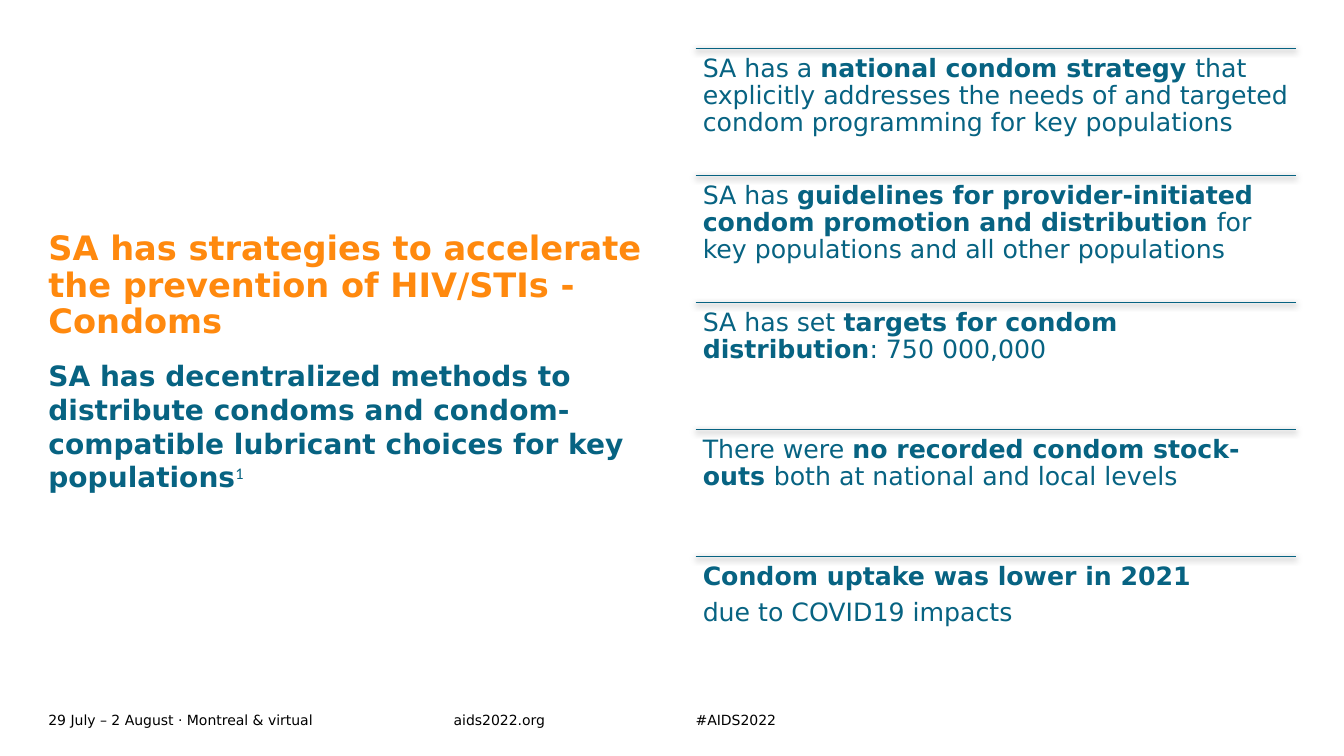
from lxml import etree
from pptx import Presentation, util as u
from pptx.dml.color import RGBColor
from pptx.enum import shapes, text
from pptx.oxml import ns, parse_xml

TITLE = [[("SA has strategies to accelerate the prevention of HIV/STIs - Condoms", "b")]]
SUMMARY = [[("SA has decentralized methods to distribute condoms and condom-compatible "
             "lubricant choices for key populations", "b"), ("1", "sup")]]
POINTS = [
    [[("SA has a ", ""), ("national condom strategy ", "b"),
      ("that explicitly addresses the needs of and targeted condom programming "
       "for key populations", "")]],
    [[("SA has ", ""),
      ("guidelines for provider-initiated condom promotion and distribution ", "b"),
      ("for key populations and all other populations", "")]],
    [[("SA has set ", ""), ("targets for condom distribution", "b"), (": 750 000,000", "")]],
    [[("There were ", ""), ("no recorded condom stock-outs ", "b"),
      ("both at national and local levels", "")]],
    [[("Condom uptake was lower in 2021", "b")], [("due to COVID19 impacts", "")]],
]
FOOTER = ["29 July – 2 August · Montreal & virtual", "aids2022.org", "#AIDS2022"]

THEME = {
    "font": "DejaVu Sans", "note_font": "Calibri",
    "teal": "076382", "orange": "FF890E", "black": "000000",
    "title": 24, "summary": 20, "point": 18, "footer": 10,
}

WIDTH, HEIGHT = 13.33, 7.5
MARGIN, COL, GUTTER, ROW = 0.48, 5.95, 0.47, 1.26
RIGHT = MARGIN + COL + GUTTER
FOOT_COL, FOOT_TOP, FOOT_H = 1.93, 7.02, 0.24
FOOT_CELLS = [(MARGIN, RIGHT - GUTTER - FOOT_COL - MARGIN),
              (RIGHT - GUTTER - FOOT_COL, FOOT_COL), (RIGHT, FOOT_COL)]

SHADOW = (f'<a:effectLst {ns.nsdecls("a")}>'
          f'<a:outerShdw blurRad="{u.Pt(4.5)}" dist="{u.Pt(1.5)}" dir="5400000" '
          'algn="ctr" rotWithShape="0"><a:srgbClr val="000000"><a:alpha val="63000"/>'
          '</a:srgbClr></a:outerShdw></a:effectLst>')


def place(sp, left, top, width, height):
    sp.left, sp.top, sp.width, sp.height = map(u.Inches, (left, top, width, height))
    return sp


def write(sp, paragraphs, size, color="teal", anchor=text.MSO_ANCHOR.TOP,
          inset=0, spacing=1.0, after=0):
    tf = sp.text_frame
    tf.word_wrap, tf.auto_size, tf.vertical_anchor = True, text.MSO_AUTO_SIZE.NONE, anchor
    tf.margin_left = tf.margin_top = tf.margin_right = tf.margin_bottom = u.Inches(inset)
    for i, runs in enumerate(paragraphs):
        p = tf.add_paragraph() if i else tf.paragraphs[0]
        pPr = p._p.get_or_add_pPr()
        pPr.set("marL", "0")
        pPr.set("indent", "0")
        etree.SubElement(pPr, ns.qn("a:buNone"))
        p.alignment, p.line_spacing = text.PP_ALIGN.LEFT, spacing
        p.space_before, p.space_after = u.Pt(0), u.Pt(after)
        for words, style in runs:
            r = p.add_run()
            r.text = words
            r.font.size, r.font.bold = u.Pt(THEME[size]), style == "b"
            r.font.name = THEME["note_font" if style == "sup" else "font"]
            r.font.color.rgb = RGBColor.from_string(THEME[color])
            if style == "sup":
                r._r.get_or_add_rPr().set("baseline", "30000")


def add_rule(parent, left, top, width):
    line = parent.add_connector(shapes.MSO_CONNECTOR.STRAIGHT, *map(
        u.Inches, (left, top, left + width, top)))
    line.line.color.rgb = RGBColor.from_string(THEME["teal"])
    line.line.width = u.Pt(0.5)
    line._element.spPr.append(parse_xml(SHADOW))


def main():
    prs = Presentation()
    prs.slide_width, prs.slide_height = u.Inches(WIDTH), u.Inches(HEIGHT)
    s = prs.slides.add_slide(prs.slide_layouts[1])

    title = place(s.shapes.title, MARGIN, 1.82, COL, 1.56)
    write(title, TITLE, "title", color="orange", anchor=text.MSO_ANCHOR.BOTTOM, spacing=0.9)
    summary = place(s.placeholders[1], MARGIN, 3.56, COL, 3.22)
    write(summary, SUMMARY, "summary")

    group = s.shapes.add_group_shape().shapes
    for row, point in enumerate(POINTS):
        top = MARGIN + row * ROW
        add_rule(group, RIGHT, top, COL)
        box = group.add_textbox(*map(u.Inches, (RIGHT, top, COL, ROW)))
        write(box, point, "point", inset=0.07, spacing=0.9, after=6.3)

    for words, (left, width) in zip(FOOTER, FOOT_CELLS):
        box = s.shapes.add_textbox(*map(u.Inches, (left, FOOT_TOP, width, FOOT_H)))
        write(box, [[(words, "")]], "footer", color="black", anchor=text.MSO_ANCHOR.MIDDLE)

    prs.save("out.pptx")


if __name__ == "__main__":
    main()
